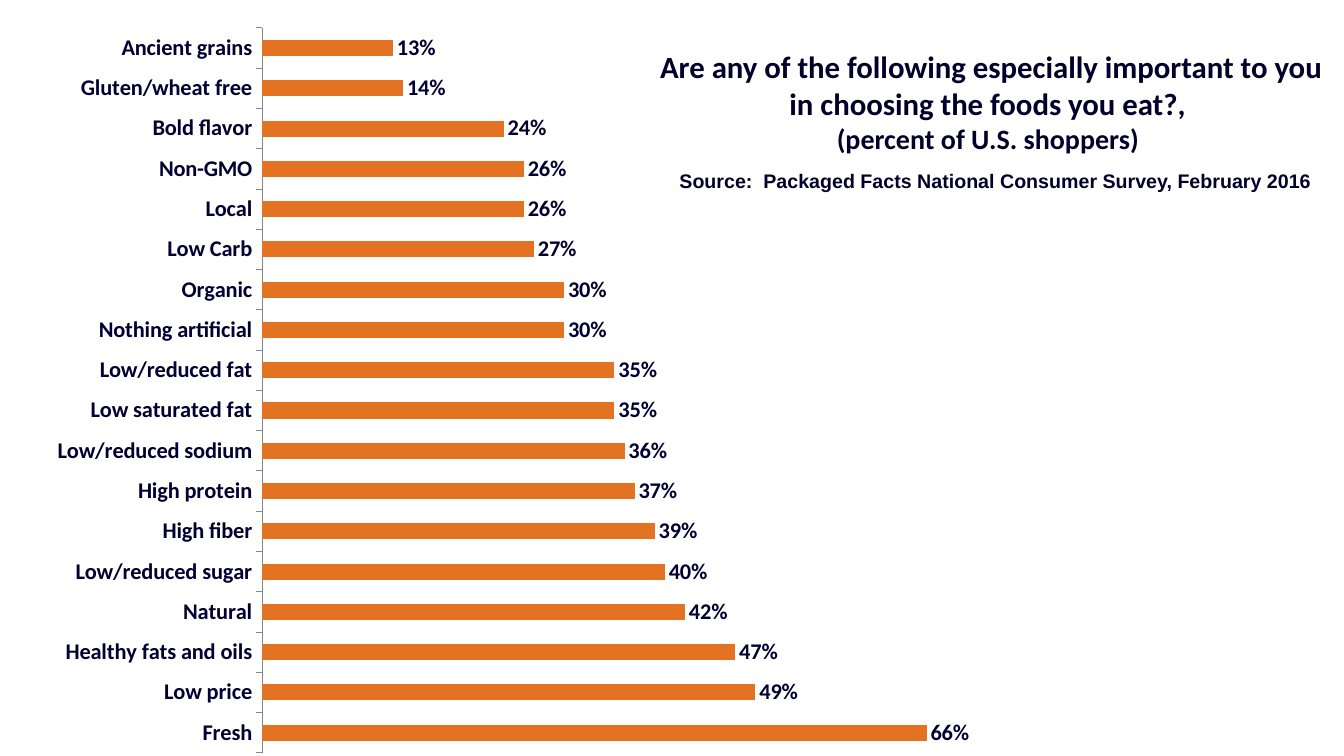
from copy import deepcopy

from lxml import etree
from pptx import Presentation
from pptx.chart.data import CategoryChartData
from pptx.dml.color import RGBColor
from pptx.enum import chart as ch
from pptx.enum import text
from pptx.oxml import parse_xml
from pptx.oxml.ns import nsdecls, qn
from pptx.util import Inches, Pt

SHARES = {
    "Fresh": 0.66, "Low price": 0.49, "Healthy fats and oils": 0.47,
    "Natural": 0.42, "Low/reduced sugar": 0.40, "High fiber": 0.39,
    "High protein": 0.37, "Low/reduced sodium": 0.36,
    "Low saturated fat": 0.35, "Low/reduced fat": 0.35,
    "Nothing artificial": 0.30, "Organic": 0.30, "Low Carb": 0.27,
    "Local": 0.26, "Non-GMO": 0.26, "Bold flavor": 0.24,
    "Gluten/wheat free": 0.14, "Ancient grains": 0.13,
}


def style(font, name, size, color):
    font.name, font.size, font.bold = name, Pt(size), True
    font.color.rgb = RGBColor.from_string(color)


prs = Presentation()
prs.slide_width, prs.slide_height = Inches(13.33), Inches(7.5)
slide = prs.slides.add_slide(prs.slide_layouts[5])

# Question
question = slide.shapes.title
question.left, question.top = Inches(6.33), Inches(0.17)
question.width, question.height = Inches(7), Inches(1.67)
frame = question.text_frame
frame.text = ("Are any of the following especially important to you in choosing "
              "the foods you eat?, \v(percent of U.S. shoppers) ")
frame.word_wrap = True
frame.auto_size = text.MSO_AUTO_SIZE.NONE
frame.vertical_anchor = text.MSO_ANCHOR.MIDDLE
wording = frame.paragraphs[0]
wording.alignment = text.PP_ALIGN.CENTER
for run, size in zip(wording.runs, (22, 20)):
    style(run.font, "Calibri", size, "00002A")
# The line break takes the size of the first run, not the title default
line_break = wording._p.find(qn("a:br"))
line_break.append(deepcopy(wording.runs[0]._r.find(qn("a:rPr"))))

# Source line
source = slide.shapes.add_textbox(Inches(6.64), Inches(1.63), Inches(6.49), Inches(0.34))
source.text_frame.text = "Source:  Packaged Facts National Consumer Survey, February 2016"
source.text_frame.word_wrap = True
source.text_frame.auto_size = text.MSO_AUTO_SIZE.SHAPE_TO_FIT_TEXT
style(source.text_frame.paragraphs[0].runs[0].font, "Arial", 14, "00002A")

# Bar chart
data = CategoryChartData(number_format="0%")
data.categories = SHARES.keys()
data.add_series("Series 1", SHARES.values())
chart = slide.shapes.add_chart(ch.XL_CHART_TYPE.BAR_CLUSTERED, 0, 0,
                               Inches(10), Inches(7.5), data).chart
chart.has_legend = False
chart.has_title = False
chart.font.name, chart.font.size = "Calibri", Pt(10)

foods = chart.category_axis
foods.major_tick_mark = ch.XL_TICK_MARK.OUTSIDE
foods.has_major_gridlines = False
foods.format.line.color.rgb = RGBColor.from_string("868686")
foods.format.line.width = Pt(0.75)
style(foods.tick_labels.font, "Calibri", 16, "000032")

percent = chart.value_axis
percent.minimum_scale, percent.maximum_scale = 0, 0.7
percent.has_major_gridlines = False
percent.visible = False

plot = chart.plots[0]
plot.gap_width = 150
plot.vary_by_categories = False
bars = plot.series[0]
bars.format.fill.solid()
bars.format.fill.fore_color.rgb = RGBColor.from_string("E37222")
labels = bars.data_labels
labels.show_value = True
labels.number_format, labels.number_format_is_linked = "0%", False
labels.position = ch.XL_LABEL_POSITION.OUTSIDE_END
style(labels.font, "Calibri", 16, "000032")

# Fixed inner plot area, as fractions of the chart
layout = parse_xml(f"<c:layout {nsdecls('c')}><c:manualLayout/></c:layout>")
settings = {"layoutTarget": "inner", "xMode": "edge", "yMode": "edge",
            "x": 0.26, "y": 0.037, "w": 0.699, "h": 0.959}
for tag, value in settings.items():
    etree.SubElement(layout[0], qn(f"c:{tag}")).set("val", str(value))
plot_area = chart._chartSpace.find(".//" + qn("c:plotArea"))
for automatic in plot_area.findall(qn("c:layout")):
    plot_area.remove(automatic)
plot_area.insert(0, layout)

prs.save("out.pptx")
